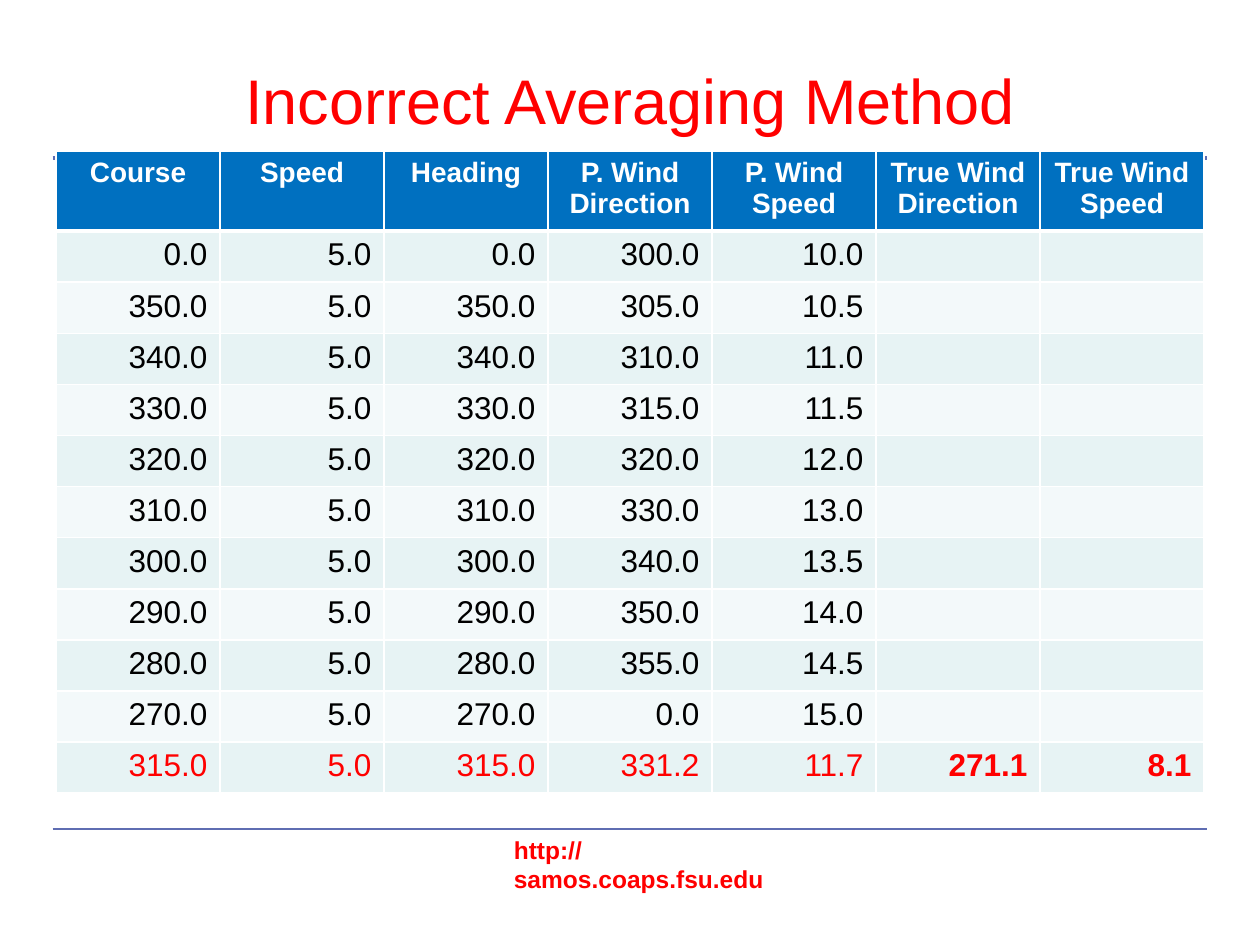
from lxml import etree
from pptx import Presentation
from pptx.dml.color import RGBColor
from pptx.enum.shapes import MSO_CONNECTOR
from pptx.enum.text import MSO_ANCHOR, PP_ALIGN
from pptx.oxml.ns import qn
from pptx.util import Cm, Pt

STRAIGHT = MSO_CONNECTOR.STRAIGHT
MIDDLE = MSO_ANCHOR.MIDDLE
LEFT, CENTER, RIGHT = PP_ALIGN.LEFT, PP_ALIGN.CENTER, PP_ALIGN.RIGHT

COLORS = {
    "red": "FF0000",
    "rule": "5F6DB2",
    "header": "0070C0",
    "band_dark": "E7F3F4",
    "band_light": "F3F9FA",
    "white": "FFFFFF",
    "black": "000000",
}

HEADINGS = ["Course", "Speed", "Heading", "P. Wind Direction", "P. Wind Speed",
            "True Wind Direction", "True Wind Speed"]
# Course (the heading is the same), platform wind direction, platform wind speed
READINGS = [
    ("0.0", "300.0", "10.0"),
    ("350.0", "305.0", "10.5"),
    ("340.0", "310.0", "11.0"),
    ("330.0", "315.0", "11.5"),
    ("320.0", "320.0", "12.0"),
    ("310.0", "330.0", "13.0"),
    ("300.0", "340.0", "13.5"),
    ("290.0", "350.0", "14.0"),
    ("280.0", "355.0", "14.5"),
    ("270.0", "0.0", "15.0"),
]
AVERAGES = ["315.0", "5.0", "315.0", "331.2", "11.7", "271.1", "8.1"]


def write(frame, text, size, color, bold=False, align=LEFT):
    para = frame.paragraphs[0]
    para.alignment = align
    span = para.add_run()
    span.text = text
    span.font.name = "Arial"
    span.font.size = Pt(size)
    span.font.bold = bold
    span.font.color.rgb = RGBColor.from_string(COLORS[color])


def add_borders(cell, bottom_width):
    """Draw white 1 pt cell borders, with a bottom border of its own width."""
    properties = cell._tc.get_or_add_tcPr()
    for side, width in (("L", 1), ("R", 1), ("T", 1), ("B", bottom_width)):
        border = etree.SubElement(properties, qn("a:ln" + side), w=str(Pt(width)))
        fill = etree.SubElement(border, qn("a:solidFill"))
        etree.SubElement(fill, qn("a:srgbClr"), val=COLORS["white"])


deck = Presentation()
deck.slide_width, deck.slide_height = Cm(25.4), Cm(19.05)
page = deck.slides.add_slide(deck.slide_layouts[6])

# Footer address
address = page.shapes.add_textbox(Cm(10.11), Cm(16.71), Cm(6.91), Cm(0.84))
address.text_frame.word_wrap = True
write(address.text_frame, "http://samos.coaps.fsu.edu", 14, "red", bold=True)

# Rules above and below the content
for y, width in ((3.18, 2.25), (16.71, 1.5)):
    rule = page.shapes.add_connector(STRAIGHT, Cm(1.06), Cm(y), Cm(24.34), Cm(y))
    rule.line.color.rgb = RGBColor.from_string(COLORS["rule"])
    rule.line.width = Pt(width)
    etree.SubElement(rule._element.spPr, qn("a:effectLst"))

# Title
title = page.shapes.add_textbox(Cm(1.06), Cm(1.06), Cm(23.28), Cm(1.9))
title.text_frame.word_wrap = True
title.text_frame.vertical_anchor = MIDDLE
write(title.text_frame, "Incorrect Averaging Method", 36, "red", align=CENTER)

# Wind table
rows = [HEADINGS]
for course, wind_direction, wind_speed in READINGS:
    rows.append([course, "5.0", course, wind_direction, wind_speed, "", ""])
rows.append(AVERAGES)
last = len(rows) - 1

table = page.shapes.add_table(len(rows), len(HEADINGS), Cm(1.13), Cm(3.05),
                              Cm(23.14), Cm(13.03)).table
for column in table.columns:
    column.width = Cm(3.306)
for r, values in enumerate(rows):
    table.rows[r].height = Cm(1.6 if r == 0 else 1.03)
    for c, value in enumerate(values):
        cell = table.cell(r, c)
        add_borders(cell, 3 if r == 0 else 1)
        band = "header" if r == 0 else "band_dark" if r % 2 else "band_light"
        cell.fill.solid()
        cell.fill.fore_color.rgb = RGBColor.from_string(COLORS[band])
        if r == 0:
            write(cell.text_frame, value, 16, "white", bold=True, align=CENTER)
        elif value:
            write(cell.text_frame, value, 18, "red" if r == last else "black",
                  bold=c >= 5, align=RIGHT)

deck.save("out.pptx")
